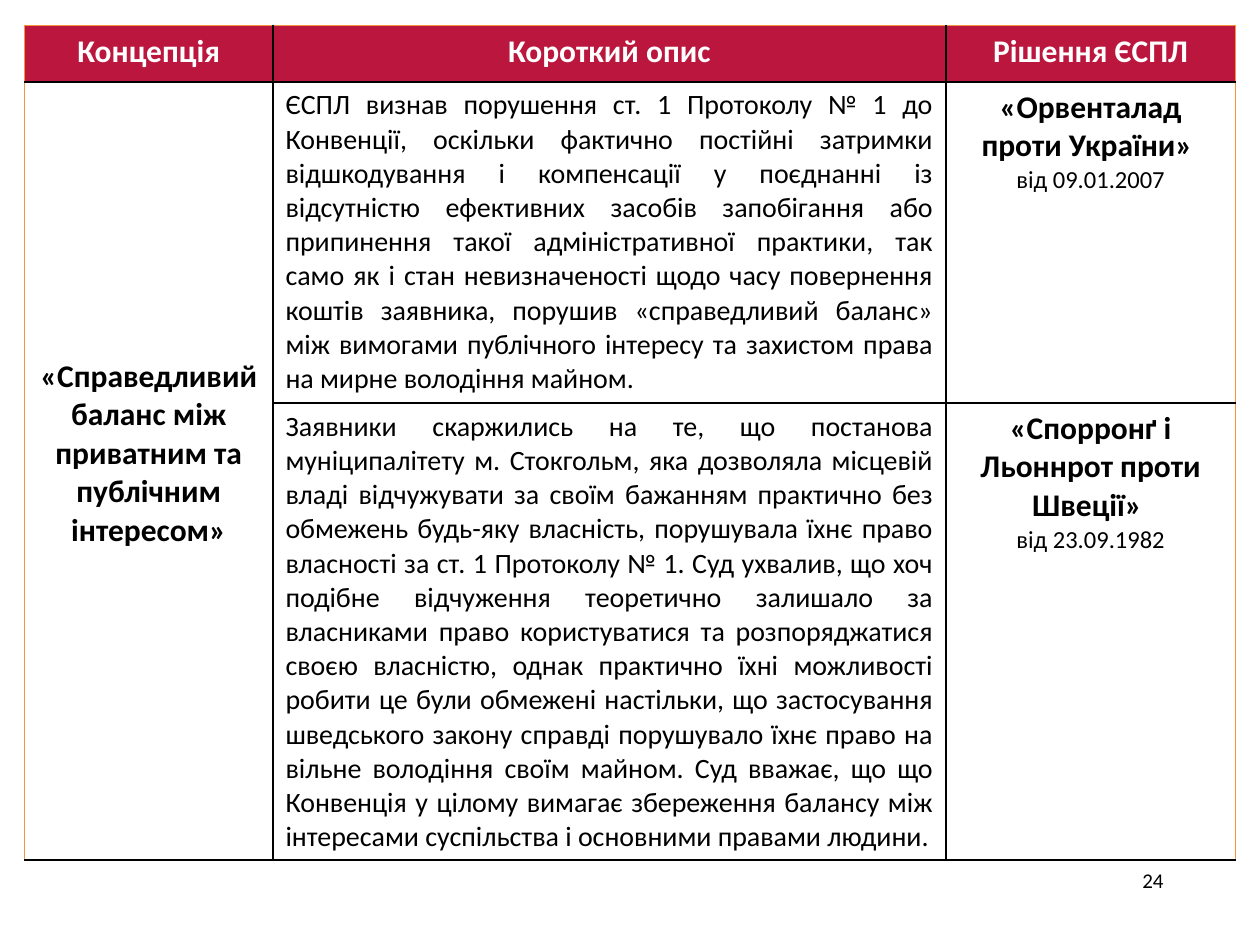
from lxml import etree
from pptx import Presentation
from pptx.dml.color import RGBColor
from pptx.enum.text import MSO_ANCHOR, PP_ALIGN
from pptx.oxml.ns import qn
from pptx.util import Pt

CENTER, RIGHT, JUSTIFY = PP_ALIGN.CENTER, PP_ALIGN.RIGHT, PP_ALIGN.JUSTIFY
TOP = MSO_ANCHOR.TOP
BLACK = RGBColor(0x00, 0x00, 0x00)
WHITE = RGBColor(0xFF, 0xFF, 0xFF)
CRIMSON = RGBColor(0xBB, 0x17, 0x3E)
ORANGE = RGBColor(0xF6, 0x92, 0x40)

FONT = "Calibri"
HEADING = {"size": Pt(18), "bold": True}
BODY = {"size": Pt(16), "bold": False}
DATE = {"size": Pt(14), "bold": False}
NUMBER = {"size": Pt(12), "bold": False}

COLUMN_WIDTHS = [142, 384.5, 165.5]
ROW_HEIGHTS = [32, 183.6, 261]
CONCEPT_OFFSET = 157.4  # space above the concept in its merged cell

HEADERS = ["Концепція", "Короткий опис", "Рішення ЄСПЛ"]
CONCEPT = "«Справедливий баланс між приватним та публічним інтересом»"
CASES = [
    ("ЄСПЛ визнав порушення ст. 1 Протоколу № 1 до Конвенції, оскільки фактично "
     "постійні затримки відшкодування і компенсації у поєднанні із відсутністю "
     "ефективних засобів запобігання або припинення такої адміністративної практики, "
     "так само як і стан невизначеності щодо часу повернення коштів заявника, порушив "
     "«справедливий баланс» між вимогами публічного інтересу та захистом права на "
     "мирне володіння майном. ",
     "«Орвенталад проти України» ", "від 09.01.2007"),
    ("Заявники скаржились на те, що постанова муніципалітету м. Стокгольм, яка "
     "дозволяла місцевій владі відчужувати за своїм бажанням практично без обмежень "
     "будь-яку власність, порушувала їхнє право власності за ст. 1 Протоколу № 1. "
     "Суд ухвалив, що хоч подібне відчуження теоретично залишало за власниками право "
     "користуватися та розпоряджатися своєю власністю, однак практично їхні "
     "можливості робити це були обмежені настільки, що застосування шведського закону "
     "справді порушувало їхнє право на вільне володіння своїм майном. Суд вважає, що "
     "що Конвенція у цілому вимагає збереження балансу між інтересами суспільства і "
     "основними правами людини.",
     "«Спорронґ і Льоннрот проти Швеції» ", "від 23.09.1982"),
]


def write(frame, lines, align, color=BLACK):
    """Fill a text frame with one paragraph per (text, format) pair."""
    for index, (text, style) in enumerate(lines):
        para = frame.paragraphs[0] if index == 0 else frame.add_paragraph()
        para.alignment = align
        span = para.add_run()
        span.text = text
        span.font.name = FONT
        span.font.color.rgb = color
        for name, value in style.items():
            setattr(span.font, name, value)


def set_borders(cell, edges):
    """Draw black inner lines, and thin orange ones on the given outer edges."""
    properties = cell._tc.get_or_add_tcPr()
    for side in "LRTB":
        color, width = (ORANGE, 0.75) if side in edges else (BLACK, 1)
        line = etree.SubElement(properties, qn(f"a:ln{side}"), w=str(Pt(width)))
        fill = etree.SubElement(line, qn("a:solidFill"))
        etree.SubElement(fill, qn("a:srgbClr"), val=str(color))


def add_case_table(page, left, top):
    width, height = sum(COLUMN_WIDTHS), sum(ROW_HEIGHTS)
    table = page.shapes.add_table(
        len(ROW_HEIGHTS), len(COLUMN_WIDTHS),
        Pt(left), Pt(top), Pt(width), Pt(height)).table
    table.first_row = table.horz_banding = False
    for column, size in zip(table.columns, COLUMN_WIDTHS):
        column.width = Pt(size)
    for row, size in zip(table.rows, ROW_HEIGHTS):
        row.height = Pt(size)

    # Borders and fills
    last_column = len(COLUMN_WIDTHS) - 1
    for row_index, row in enumerate(table.rows):
        for column_index, cell in enumerate(row.cells):
            edges = {0: "L", last_column: "R"}.get(column_index, "")
            set_borders(cell, edges + ("T" if row_index == 0 else ""))
            if row_index == 0:
                cell.fill.solid()
                cell.fill.fore_color.rgb = CRIMSON
            else:
                cell.fill.background()

    # Header row
    for column_index, header in enumerate(HEADERS):
        write(table.cell(0, column_index).text_frame, [(header, HEADING)], CENTER, WHITE)

    # Concept shared by all cases
    concept = table.cell(1, 0)
    concept.merge(table.cell(len(CASES), 0))
    concept.margin_top = Pt(CONCEPT_OFFSET)
    write(concept.text_frame, [(CONCEPT, HEADING)], CENTER)

    # Descriptions and judgments
    for row_index, (description, case, date) in enumerate(CASES, start=1):
        write(table.cell(row_index, 1).text_frame, [(description, BODY)], JUSTIFY)
        write(table.cell(row_index, 2).text_frame, [(case, HEADING), (date, DATE)], CENTER)


def add_page_number(page, left, top, width, height):
    box = page.shapes.add_textbox(Pt(left), Pt(top), Pt(width), Pt(height))
    box.text_frame.word_wrap = True
    box.text_frame.vertical_anchor = TOP
    write(box.text_frame, [("24", NUMBER)], RIGHT)


def main():
    deck = Presentation()
    deck.slide_width, deck.slide_height = Pt(720), Pt(540)
    page = deck.slides.add_slide(deck.slide_layouts[6])
    add_page_number(page, 516, 492, 156, 37.5)
    add_case_table(page, 14, 14.8)
    deck.save("out.pptx")


if __name__ == "__main__":
    main()
